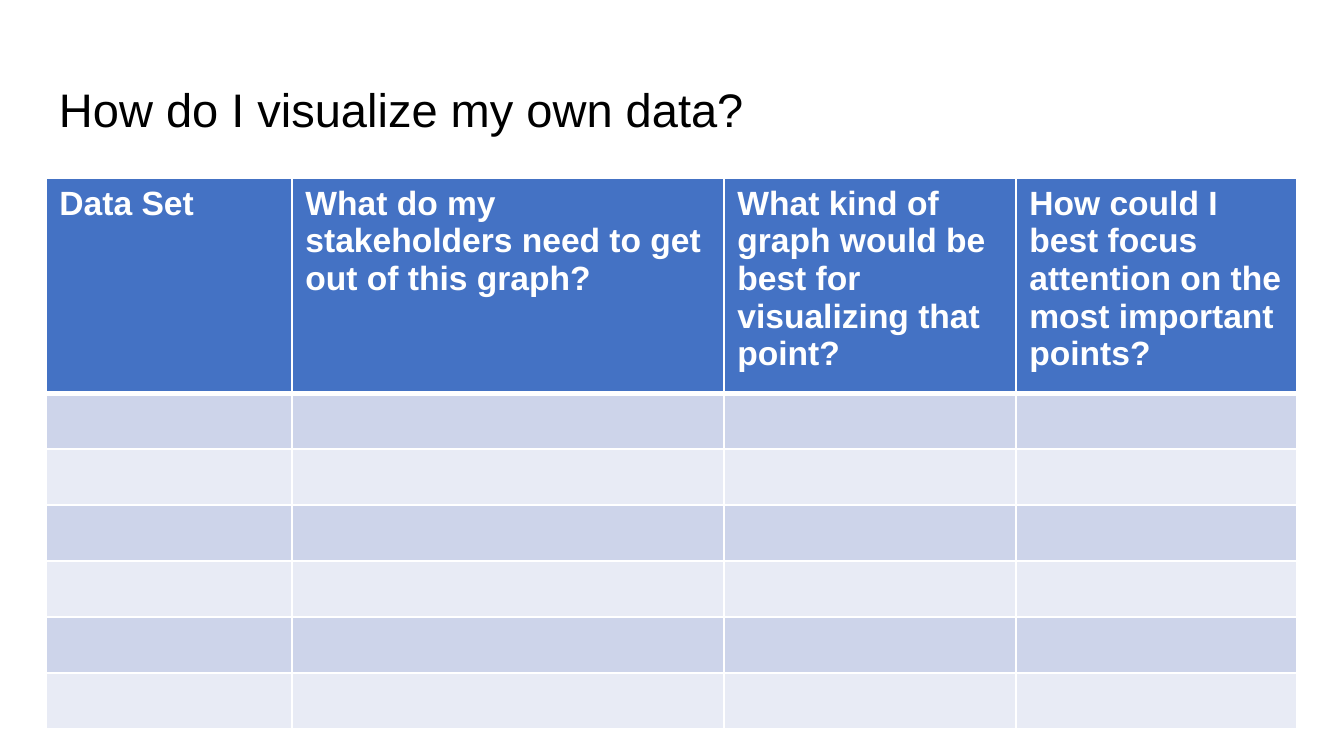
from dataclasses import dataclass

from lxml.etree import SubElement
from pptx import Presentation
from pptx.dml.color import RGBColor
from pptx.enum.text import MSO_ANCHOR
from pptx.oxml.ns import qn
from pptx.util import Pt

SCALE = 914400 / 134.4


@dataclass(frozen=True)
class Theme:
    """Colours, type sizes and line widths of the slide."""
    font: str = "Arial"
    ink: str = "000000"
    light: str = "FFFFFF"
    head: str = "4472C4"
    bands: tuple = ("CDD4EA", "E8EBF5")
    title: float = 25.2
    body: float = 18
    thin: int = 1
    thick: int = 3


THEME = Theme()
HEADS = (
    "Data Set",
    "What do my stakeholders need to get out of this graph?",
    "What kind of graph would be best for visualizing that point?",
    "How could I best focus attention on the most important points?",
)
WIDTHS = (246, 432, 292, 281)
HEIGHTS = (200,) + (56,) * 6


def px(num):
    """Turn pixels into EMU."""
    return round(num * SCALE)


def write(frame, text, size=THEME.body, color=THEME.ink, bold=False):
    """Put formatted text into a text frame."""
    frame.word_wrap = True
    run = frame.paragraphs[0].add_run()
    run.text = text
    font = run.font
    font.name, font.size, font.bold = THEME.font, Pt(size), bold
    font.color.rgb = RGBColor.from_string(color)


def edge(cell, side, width):
    """Draw one cell border."""
    line = SubElement(cell._tc.get_or_add_tcPr(), qn(f"a:ln{side}"), w=str(Pt(width)))
    SubElement(SubElement(line, qn("a:solidFill")), qn("a:srgbClr"), val=THEME.light)


def paint(cell, row):
    """Give a cell its borders and the fill of its row."""
    edge(cell, "L", THEME.thin)
    edge(cell, "R", THEME.thin)
    edge(cell, "T", THEME.thick if row == 1 else THEME.thin)
    edge(cell, "B", THEME.thick if row == 0 else THEME.thin)
    color = THEME.bands[(row - 1) % 2] if row else THEME.head
    cell.fill.solid()
    cell.fill.fore_color.rgb = RGBColor.from_string(color)


def title(slide, box, text):
    """Place the slide title in its box."""
    frame = slide.shapes.add_textbox(*map(px, box)).text_frame
    frame.vertical_anchor = MSO_ANCHOR.MIDDLE
    frame.margin_left = frame.margin_right = px(13)
    write(frame, text, size=THEME.title)


def grid(slide, box):
    """Place the planning table in its box."""
    shape = slide.shapes.add_table(len(HEIGHTS), len(WIDTHS), *map(px, box))
    table = shape.table
    for col, width in zip(table.columns, WIDTHS):
        col.width = px(width)
    for num, (row, height) in enumerate(zip(table.rows, HEIGHTS)):
        row.height = px(height)
        for cell in row.cells:
            paint(cell, num)
    for cell, text in zip(table.rows[0].cells, HEADS):
        write(cell.text_frame, text, color=THEME.light, bold=True)


def main():
    """Build and save the slide."""
    deck = Presentation()
    deck.slide_width, deck.slide_height = px(1344), px(756)
    slide = deck.slides.add_slide(deck.slide_layouts[6])
    title(slide, (46, 66, 1253, 85), "How do I visualize my own data?")
    grid(slide, (46, 178, sum(WIDTHS), sum(HEIGHTS)))
    deck.save("out.pptx")


if __name__ == "__main__":
    main()
